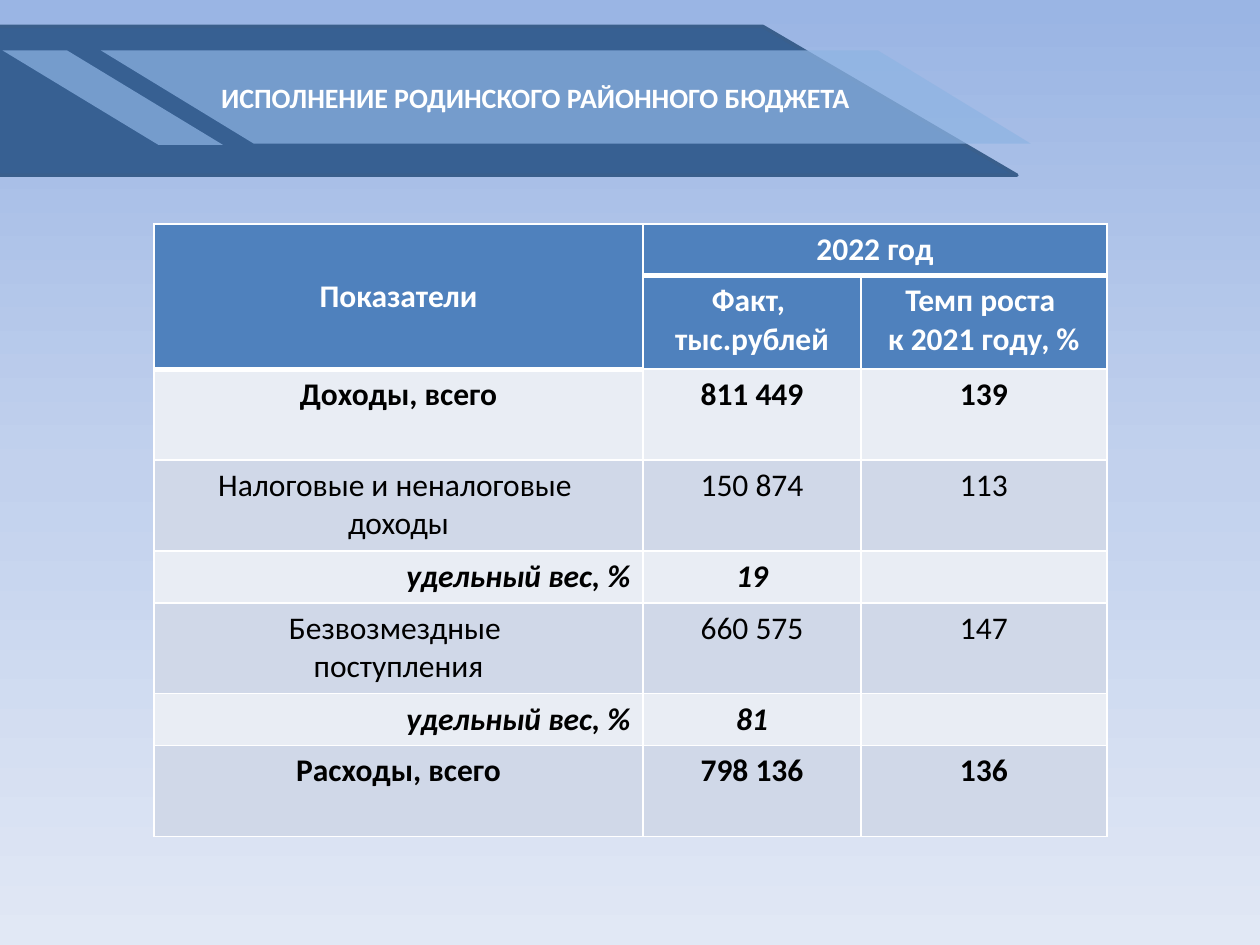
from copy import deepcopy

from lxml import etree
from pptx import Presentation
from pptx.dml.color import RGBColor
from pptx.enum import shapes, text
from pptx.oxml.ns import qn
from pptx.util import Pt

FONT = "Calibri"
WHITE, BLACK = "FFFFFF", "000000"
HEADER, LIGHT, DARK = "4F81BD", "E9EDF4", "D0D8E8"
SKY = [(0, "9AB5E4"), (0.5, "C2D1ED"), (1, "E1E8F5")]

TITLE = "ИСПОЛНЕНИЕ РОДИНСКОГО РАЙОННОГО БЮДЖЕТА"
HEADER_ROWS = [
    ("Показатели", "2022 год", ""),
    ("", "Факт, \nтыс.рублей", "Темп роста \nк 2021 году, %"),
]
# row style, then the cell texts
BODY_ROWS = [
    ("total", "Доходы, всего", "811 449", "139"),
    ("item", "Налоговые и неналоговые \nдоходы", "150 874", "113"),
    ("share", "удельный вес, %", "19", ""),
    ("item", "Безвозмездные \nпоступления", "660 575", "147"),
    ("share", "удельный вес, %", "81", ""),
    ("total", "Расходы, всего", "798 136", "136"),
]
HEADER_HEIGHTS = [29.5, 53.5]
BODY_HEIGHTS = {"total": 52, "item": 52, "share": 29.5}
COLUMN_WIDTHS = [279.5, 124.5, 140.5]
TABLE_LEFT, TABLE_TOP = 88, 128

# preset, box, slant, colour, opacity in percent
RIBBONS = [
    (shapes.MSO_SHAPE.FLOWCHART_DATA, (-144.7, 15.1, 725.8, 85), None, "376092", 100),
    (shapes.MSO_SHAPE.PARALLELOGRAM, (57.6, 28.8, 531.4, 53.3), 1.64, "8EB4E3", 72),
    (shapes.MSO_SHAPE.PARALLELOGRAM, (1.44, 28.8, 126, 54), 1.65, "8EB4E3", 72),
]


def rgb(color):
    return RGBColor.from_string(color)


def paint_background(slide):
    fill = slide.background.fill
    fill.gradient()
    fill.gradient_angle = 270
    stops = slide.element.find(".//" + qn("a:gsLst"))
    stops.append(deepcopy(stops[0]))
    for stop, (position, color) in zip(fill.gradient_stops, SKY):
        stop.position = position
        stop.color.rgb = rgb(color)


def add_ribbon(slide, preset, box, slant, color, opacity):
    ribbon = slide.shapes.add_shape(preset, *map(Pt, box))
    ribbon.shadow.inherit = False
    ribbon.element.spPr.find(qn("a:xfrm")).set("flipH", "1")
    ribbon.fill.solid()
    ribbon.fill.fore_color.rgb = rgb(color)
    if slant:
        ribbon.adjustments[0] = slant
        ribbon.line.fill.background()
        tone = ribbon.element.spPr.find(".//" + qn("a:srgbClr"))
        etree.SubElement(tone, qn("a:alpha"), val=str(opacity * 1000))
    else:
        ribbon.line.color.rgb = rgb("3A5F8C")
        ribbon.line.width = Pt(2)


def write(frame, content, size, color, bold=True, italic=False, align=text.PP_ALIGN.CENTER):
    for index, line in enumerate(content.split("\n")):
        para = frame.add_paragraph() if index else frame.paragraphs[0]
        para.alignment = align
        span = para.add_run()
        span.text = line
        font = span.font
        font.name, font.size, font.bold, font.italic = FONT, Pt(size), bold, italic
        font.color.rgb = rgb(color)


def style_cell(cell, color, bottom=1):
    """Give a cell white borders and a solid fill."""
    properties = cell._tc.get_or_add_tcPr()
    for side, width in (("L", 1), ("R", 1), ("T", 1), ("B", bottom)):
        line = etree.SubElement(properties, qn("a:ln" + side), w=str(Pt(width)))
        paint = etree.SubElement(line, qn("a:solidFill"))
        etree.SubElement(paint, qn("a:srgbClr"), val=WHITE)
    cell.fill.solid()
    cell.fill.fore_color.rgb = rgb(color)


def add_budget_table(slide):
    heights = HEADER_HEIGHTS + [BODY_HEIGHTS[row[0]] for row in BODY_ROWS]
    table = slide.shapes.add_table(
        len(heights), len(COLUMN_WIDTHS), Pt(TABLE_LEFT), Pt(TABLE_TOP),
        Pt(sum(COLUMN_WIDTHS)), Pt(sum(heights))).table
    table.first_row = table.horz_banding = False
    for column, width in zip(table.columns, COLUMN_WIDTHS):
        column.width = Pt(width)
    for row, height in zip(table.rows, heights):
        row.height = Pt(height)
    table.cell(0, 0).merge(table.cell(1, 0))
    table.cell(0, 1).merge(table.cell(0, 2))
    table.cell(0, 0).vertical_anchor = text.MSO_ANCHOR.MIDDLE

    for r, row in enumerate(HEADER_ROWS):
        for c, content in enumerate(row):
            cell = table.cell(r, c)
            style_cell(cell, HEADER, bottom=3 if r == 0 or c == 0 else 1)
            if content:
                write(cell.text_frame, content, 18, WHITE)
    for r, (style, *row) in enumerate(BODY_ROWS):
        for c, content in enumerate(row):
            cell = table.cell(r + len(HEADER_ROWS), c)
            style_cell(cell, DARK if r % 2 else LIGHT)
            share = style == "share"
            align = text.PP_ALIGN.RIGHT if share and c == 0 else text.PP_ALIGN.CENTER
            if content:
                write(cell.text_frame, content, 18, BLACK, style != "item", share, align)


def add_title(slide):
    box = slide.shapes.add_textbox(Pt(0), Pt(26), Pt(612), Pt(79))
    frame = box.text_frame
    frame.word_wrap = True
    frame.vertical_anchor = text.MSO_ANCHOR.MIDDLE
    frame.margin_bottom = Pt(23)  # lifts the title to the middle of the ribbon
    write(frame, TITLE, 16, WHITE)


def main():
    deck = Presentation()
    deck.slide_width, deck.slide_height = Pt(720), Pt(540)
    slide = deck.slides.add_slide(deck.slide_layouts[6])
    paint_background(slide)
    add_budget_table(slide)
    for ribbon in RIBBONS:
        add_ribbon(slide, *ribbon)
    add_title(slide)
    deck.save("out.pptx")


if __name__ == "__main__":
    main()
